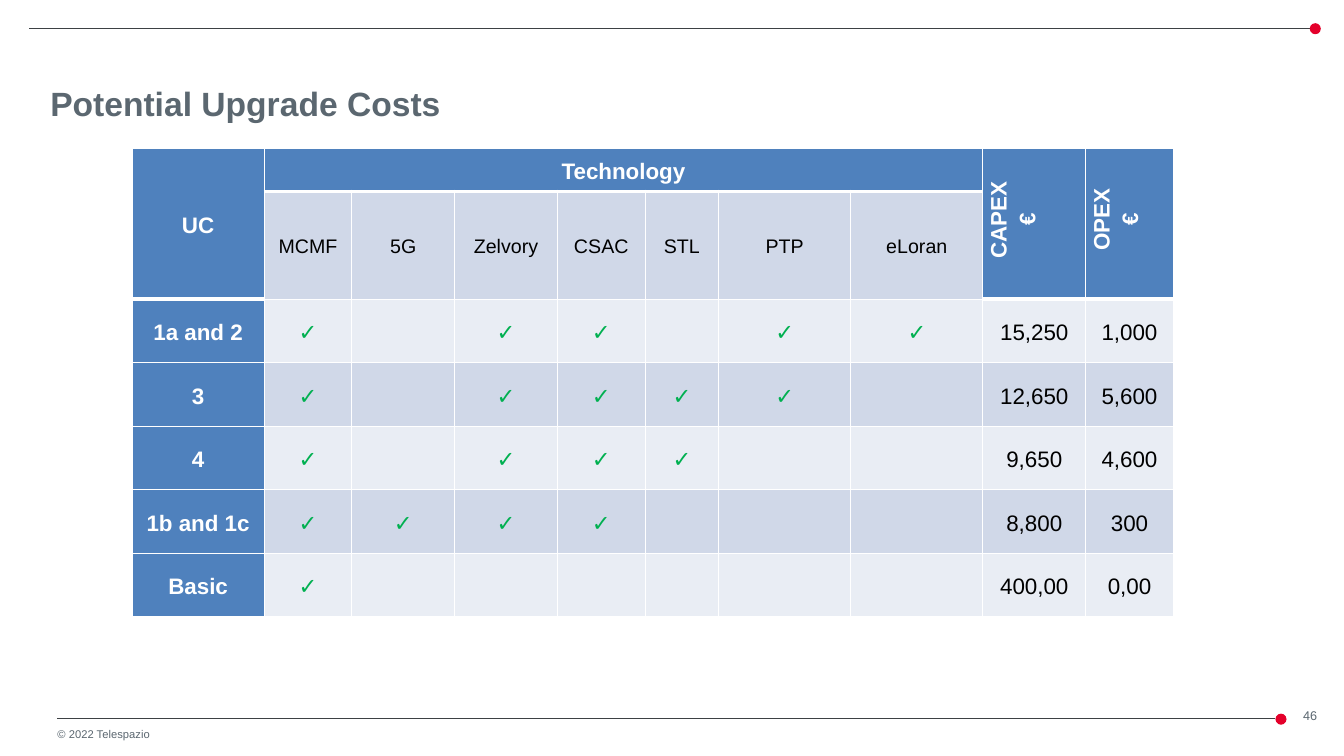
from typing import NamedTuple

from lxml import etree
from pptx import Presentation
from pptx.dml.color import RGBColor
from pptx.enum.shapes import MSO_CONNECTOR, MSO_SHAPE
from pptx.enum.text import MSO_ANCHOR, PP_ALIGN
from pptx.oxml.ns import qn
from pptx.util import Pt

EMU_PER_PX = 9144  # 100 px to the inch
FONT = "Arial"
LEFT, CENTER = PP_ALIGN.LEFT, PP_ALIGN.CENTER
TOP, MIDDLE, BOTTOM = MSO_ANCHOR.TOP, MSO_ANCHOR.MIDDLE, MSO_ANCHOR.BOTTOM
STRAIGHT, OVAL = MSO_CONNECTOR.STRAIGHT, MSO_SHAPE.OVAL

WHITE = RGBColor(0xFF, 0xFF, 0xFF)
BLACK = RGBColor(0x00, 0x00, 0x00)
GREY = RGBColor(0x5B, 0x67, 0x70)
RULE_GREY = RGBColor(0x3D, 0x41, 0x44)
RED = RGBColor(0xE4, 0x00, 0x2B)
GREEN = RGBColor(0x00, 0xB0, 0x50)
BLUE = RGBColor(0x4F, 0x81, 0xBD)
BAND_DARK = RGBColor(0xD0, 0xD8, 0xE8)
BAND_LIGHT = RGBColor(0xE9, 0xED, 0xF4)


class Box(NamedTuple):
    left: int
    top: int
    width: int
    height: int


class Rule(NamedTuple):
    """A thin horizontal line that ends in a red dot."""
    left: int
    right: int
    y: int


class UseCase(NamedTuple):
    name: str
    technologies: str
    capex: str
    opex: str


RULES = [Rule(29, 1299, 28), Rule(57, 1265, 713)]
DOT_SIZE = 11

TABLE_BOX = Box(131, 147, 1033, 465)
COLUMN_WIDTHS = [131, 87, 102, 102, 87, 73, 131, 131, 102, 87]
ROW_HEIGHTS = [43, 107] + [63] * 5
TECHNOLOGIES = ["MCMF", "5G", "Zelvory", "CSAC", "STL", "PTP", "eLoran"]
CAPEX_COLUMN, OPEX_COLUMN = 8, 9
TALL_HEADERS = {0: "UC", CAPEX_COLUMN: "CAPEX\n€", OPEX_COLUMN: "OPEX\n€"}
USE_CASES = [
    UseCase("1a and 2", "MCMF Zelvory CSAC PTP eLoran", "15,250", "1,000"),
    UseCase("3", "MCMF Zelvory CSAC STL PTP", "12,650", "5,600"),
    UseCase("4", "MCMF Zelvory CSAC STL", "9,650", "4,600"),
    UseCase("1b and 1c", "MCMF 5G Zelvory CSAC", "8,800", "300"),
    UseCase("Basic", "MCMF", "400,00", "0,00"),
]


def px(length: int) -> int:
    return length * EMU_PER_PX


def write_text(frame, text: str, *, size: int, color: RGBColor, bold: bool = False,
               align=LEFT, spacing: float = 1.0, indent: int = 0) -> None:
    """Write one paragraph for each line of text."""
    for index, line in enumerate(text.split("\n")):
        paragraph = frame.add_paragraph() if index else frame.paragraphs[0]
        paragraph.alignment = align
        paragraph.line_spacing = spacing
        if indent:
            properties = paragraph._p.get_or_add_pPr()
            properties.set("marL", str(px(indent)))
            properties.set("indent", "0")
        run = paragraph.add_run()
        run.text = line
        run.font.name = FONT
        run.font.size = Pt(size)
        run.font.bold = bold
        run.font.color.rgb = color


def add_text_box(slide, box: Box, text: str, *, anchor=TOP, inset: int = 0, **text_format) -> None:
    frame = slide.shapes.add_textbox(*map(px, box)).text_frame
    frame.word_wrap = True
    frame.vertical_anchor = anchor
    frame.margin_left = frame.margin_right = px(inset)
    frame.margin_top = frame.margin_bottom = px(inset // 2)
    write_text(frame, text, **text_format)


def add_rule(slide, rule: Rule) -> None:
    line = slide.shapes.add_connector(
        STRAIGHT, px(rule.left), px(rule.y), px(rule.right), px(rule.y))
    line.line.color.rgb = RULE_GREY
    line.line.width = Pt(0.75)
    etree.SubElement(line._element.spPr, qn("a:effectLst"))
    dot_box = Box(rule.right, rule.y - DOT_SIZE // 2, DOT_SIZE, DOT_SIZE)
    dot = slide.shapes.add_shape(OVAL, *map(px, dot_box))
    dot.shadow.inherit = False
    dot.fill.solid()
    dot.fill.fore_color.rgb = RED
    dot.line.fill.background()


def is_header(row: int, column: int) -> bool:
    return row == 0 or (row == 1 and column in TALL_HEADERS)


def cell_fill(row: int, column: int) -> RGBColor:
    if column == 0 or is_header(row, column):
        return BLUE
    return BAND_DARK if row % 2 else BAND_LIGHT


def style_cell(cell, row: int, column: int) -> None:
    """Set the margins, white borders and fill; a header has a heavy bottom edge."""
    cell.margin_left = cell.margin_right = px(7)
    cell.margin_top = cell.margin_bottom = 0
    cell.vertical_anchor = MIDDLE
    header = is_header(row, column)
    below_header = row > 0 and not header and is_header(row - 1, column)
    widths = {"L": 1, "R": 1, "T": 3 if below_header else 1, "B": 3 if header else 1}
    properties = cell._tc.get_or_add_tcPr()
    for side, width in widths.items():
        border = etree.SubElement(properties, qn(f"a:ln{side}"), w=str(Pt(width)))
        fill = etree.SubElement(border, qn("a:solidFill"))
        etree.SubElement(fill, qn("a:srgbClr"), val=str(WHITE))
    cell.fill.solid()
    cell.fill.fore_color.rgb = cell_fill(row, column)


def write_cell(cell, text: str, *, size: int = 16, color: RGBColor = WHITE,
               bold: bool = True, indent: int = 0) -> None:
    write_text(cell.text_frame, text, size=size, color=color, bold=bold,
               align=CENTER, spacing=1.15, indent=indent)


def add_cost_table(slide) -> None:
    table = slide.shapes.add_table(
        len(ROW_HEIGHTS), len(COLUMN_WIDTHS), *map(px, TABLE_BOX)).table
    for column, width in enumerate(COLUMN_WIDTHS):
        table.columns[column].width = px(width)
    for row, height in enumerate(ROW_HEIGHTS):
        table.rows[row].height = px(height)
        for column in range(len(COLUMN_WIDTHS)):
            style_cell(table.cell(row, column), row, column)

    for column, label in TALL_HEADERS.items():
        cell = table.cell(0, column)
        cell.merge(table.cell(1, column))
        if column:
            cell._tc.get_or_add_tcPr().set("vert", "vert270")
        write_cell(cell, label, indent=8 if column else 0)
    table.cell(0, 1).merge(table.cell(0, len(TECHNOLOGIES)))
    write_cell(table.cell(0, 1), "Technology")
    for column, technology in enumerate(TECHNOLOGIES, start=1):
        write_cell(table.cell(1, column), technology, size=14, color=BLACK, bold=False)

    for row, use_case in enumerate(USE_CASES, start=2):
        write_cell(table.cell(row, 0), use_case.name)
        for technology in use_case.technologies.split():
            column = TECHNOLOGIES.index(technology) + 1
            write_cell(table.cell(row, column), "✓", color=GREEN)
        write_cell(table.cell(row, CAPEX_COLUMN), use_case.capex, color=BLACK, bold=False)
        write_cell(table.cell(row, OPEX_COLUMN), use_case.opex, color=BLACK, bold=False)


def main() -> None:
    presentation = Presentation()
    presentation.slide_width = px(1333)
    presentation.slide_height = px(750)
    slide = presentation.slides.add_slide(presentation.slide_layouts[6])
    for rule in RULES:
        add_rule(slide, rule)
    add_text_box(slide, Box(1278, 701, 43, 16), "46",
                 anchor=BOTTOM, size=9, color=GREY, align=CENTER)
    add_text_box(slide, Box(57, 722, 230, 13), "© 2022 Telespazio", size=8, color=GREY)
    add_text_box(slide, Box(40, 77, 1225, 55), "Potential Upgrade Costs",
                 size=24, color=GREY, bold=True, inset=10)
    add_cost_table(slide)
    presentation.save("out.pptx")


if __name__ == "__main__":
    main()
